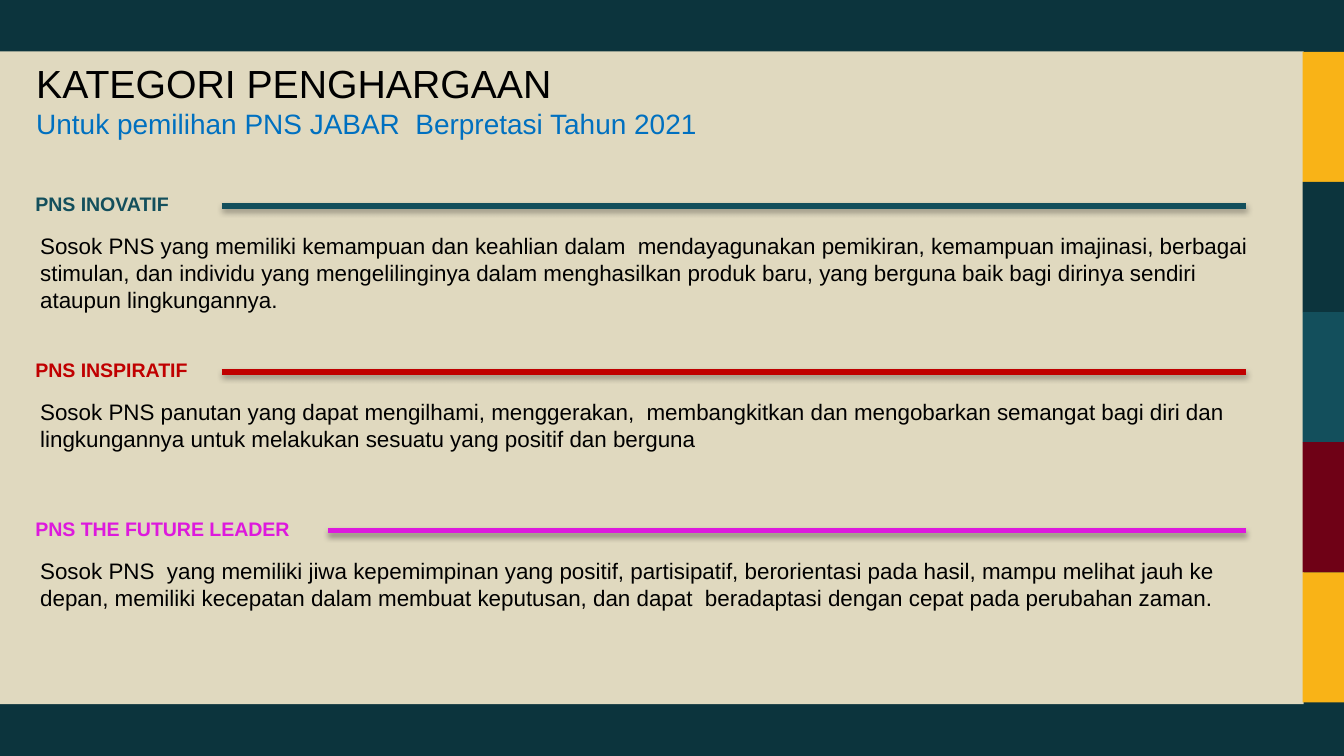
from dataclasses import dataclass

import pptx
import pptx.dml.color
import pptx.enum.shapes
import pptx.enum.text
import pptx.oxml
import pptx.oxml.ns
import pptx.util
from pptx.util import Cm

FONT = "Arial"
BLACK = "000000"
DARK_TEAL = "0C343D"
TEAL = "134F5C"
AMBER = "F9B317"
MAROON = "6F0116"
SIDE_COLORS = [AMBER, DARK_TEAL, TEAL, MAROON, AMBER]
BAR_HEIGHT = 2.46
RULE_END = 23.55


@dataclass
class Category:
    name: str
    description: str
    color: str
    top: float
    rule_start: float


CATEGORIES = [
    Category(
        "PNS INOVATIF",
        "Sosok PNS yang memiliki kemampuan dan keahlian dalam  mendayagunakan "
        "pemikiran, kemampuan imajinasi, berbagai  stimulan, dan individu yang "
        "mengelilinginya dalam menghasilkan produk baru, yang berguna baik bagi "
        "dirinya sendiri ataupun lingkungannya.",
        TEAL, 3.51, 4.19),
    Category(
        "PNS INSPIRATIF",
        "Sosok PNS panutan yang dapat mengilhami, menggerakan,  membangkitkan dan "
        "mengobarkan semangat bagi diri dan lingkungannya untuk melakukan sesuatu "
        "yang positif dan berguna",
        "C00000", 6.65, 4.19),
    Category(
        "PNS THE FUTURE LEADER",
        "Sosok PNS  yang memiliki jiwa kepemimpinan yang positif, partisipatif, "
        "berorientasi pada hasil, mampu melihat jauh ke  depan, memiliki kecepatan "
        "dalam membuat keputusan, dan dapat  beradaptasi dengan cepat pada "
        "perubahan zaman.",
        "DD19DD", 9.65, 6.2),
]


def rgb(value: str) -> pptx.dml.color.RGBColor:
    return pptx.dml.color.RGBColor.from_string(value)


def add_run(paragraph, text: str, size: float, color: str, bold: bool = False) -> None:
    run = paragraph.add_run()
    run.text = text
    run.font.name = FONT
    run.font.size = pptx.util.Pt(size)
    run.font.bold = bold
    run.font.color.rgb = rgb(color)


def add_block(slide, left: float, top: float, width: float, height: float, color: str):
    shape = slide.shapes.add_shape(
        pptx.enum.shapes.MSO_SHAPE.RECTANGLE, Cm(left), Cm(top), Cm(width), Cm(height))
    shape.shadow.inherit = False
    shape.fill.solid()
    shape.fill.fore_color.rgb = rgb(color)
    shape.line.fill.background()
    return shape


def set_opacity(shape, percent: int) -> None:
    color = shape.fill._xPr.find(".//" + pptx.oxml.ns.qn("a:srgbClr"))
    color.append(pptx.oxml.parse_xml(
        f'<a:alpha {pptx.oxml.ns.nsdecls("a")} val="{percent * 1000}"/>'))


def add_text(slide, left: float, top: float, height: float, text: str,
             size: float, color: str, bold: bool = False) -> None:
    box = slide.shapes.add_textbox(Cm(left), Cm(top), Cm(23.65), Cm(height))
    box.text_frame.word_wrap = True
    add_run(box.text_frame.paragraphs[0], text, size, color, bold)


def add_rule(slide, start: float, y: float, color: str) -> None:
    """Draw a horizontal line with a soft shadow below it."""
    line = slide.shapes.add_connector(
        pptx.enum.shapes.MSO_CONNECTOR.STRAIGHT, Cm(start), Cm(y), Cm(RULE_END), Cm(y))
    line.line.color.rgb = rgb(color)
    line.line.width = pptx.util.Pt(3)
    line._element.spPr.append(pptx.oxml.parse_xml(
        f'<a:effectLst {pptx.oxml.ns.nsdecls("a")}>'
        '<a:outerShdw blurRad="40000" dist="23000" dir="5400000" rotWithShape="0">'
        '<a:srgbClr val="000000"><a:alpha val="35000"/></a:srgbClr>'
        '</a:outerShdw></a:effectLst>'))


def add_category(slide, category: Category) -> None:
    add_text(slide, 0.51, category.top + 0.76, 1.27, category.description, 12, BLACK)
    add_text(slide, 0.42, category.top, 0.71, category.name, 10.5, category.color, True)
    add_rule(slide, category.rule_start, category.top + 0.38, category.color)


def fill_title(title) -> None:
    title.left, title.top, title.width, title.height = Cm(0.43), Cm(0.99), Cm(23.11), Cm(1.8)
    frame = title.text_frame
    frame.auto_size = pptx.enum.text.MSO_AUTO_SIZE.NONE
    frame.vertical_anchor = pptx.enum.text.MSO_ANCHOR.MIDDLE
    heading, subtitle = frame.paragraphs[0], frame.add_paragraph()
    add_run(heading, "KATEGORI PENGHARGAAN", 21, BLACK)
    add_run(subtitle, "Untuk pemilihan PNS JABAR  Berpretasi Tahun 2021", 15, "0070C0")
    for paragraph in (heading, subtitle):
        paragraph.alignment = pptx.enum.text.PP_ALIGN.LEFT


def main() -> None:
    presentation = pptx.Presentation()
    presentation.slide_width, presentation.slide_height = Cm(25.4), Cm(14.29)
    slide = presentation.slides.add_slide(presentation.slide_layouts.get_by_name("Title Only"))
    slide.background.fill.solid()
    slide.background.fill.fore_color.rgb = rgb(DARK_TEAL)

    panel = add_block(slide, 0, 0.97, 24.64, 12.34, "FEF0D1")
    set_opacity(panel, 88)
    title = slide.shapes.title
    panel._element.addnext(title._element)
    fill_title(title)

    for index, color in enumerate(SIDE_COLORS):
        add_block(slide, 24.62, 0.98 + index * BAR_HEIGHT, 0.78, BAR_HEIGHT, color)
    for category in CATEGORIES:
        add_category(slide, category)
    presentation.save("out.pptx")


if __name__ == "__main__":
    main()
